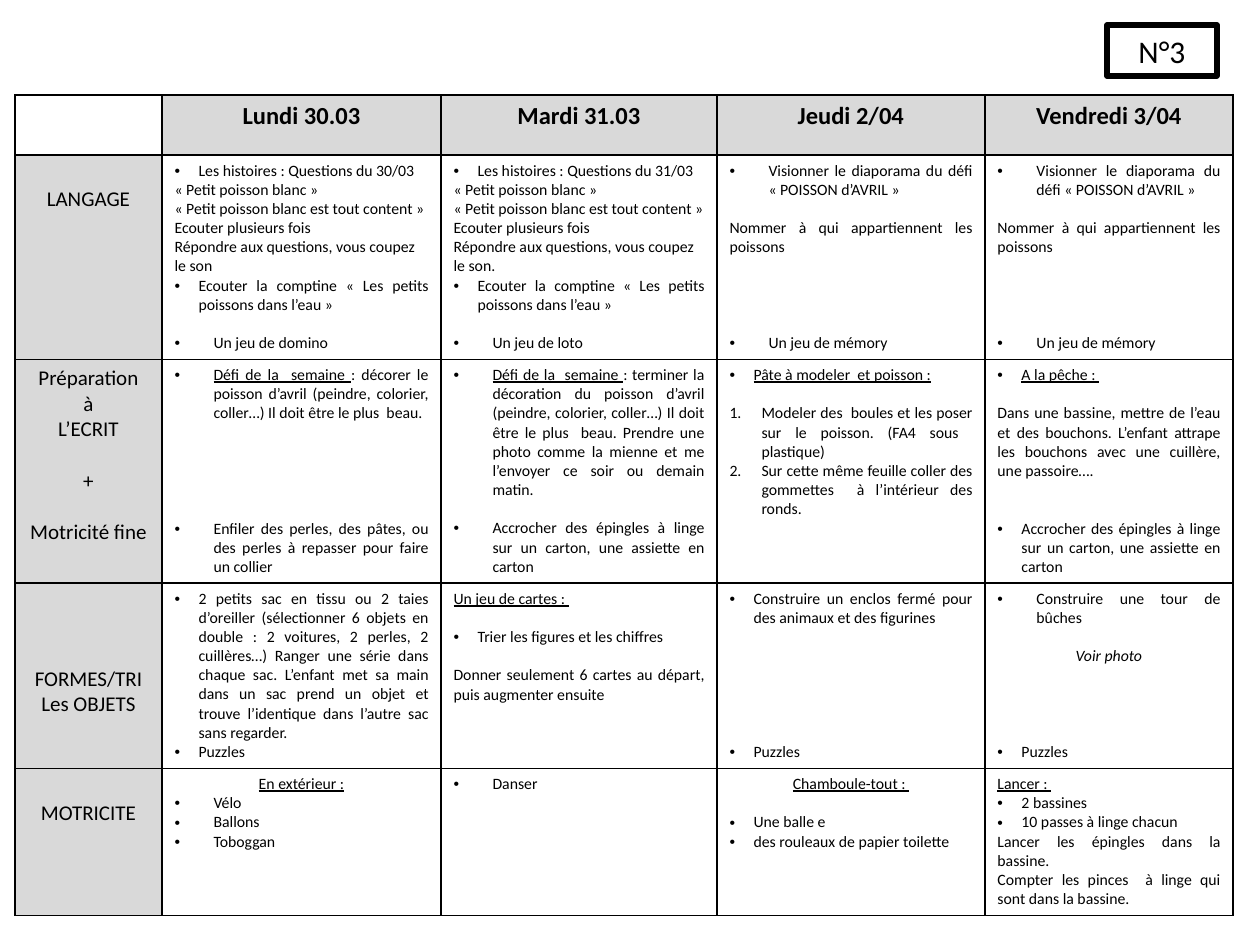
"""Weekly preschool activity timetable on one slide."""
import pptx
import pptx.dml.color
import pptx.enum.shapes
import pptx.enum.text
import pptx.oxml.ns
import pptx.util
from lxml import etree

PX = 914400 // 126
COLORS = {"black": "000000", "white": "FFFFFF", "grey": "D9D9D9"}
FONT = "Calibri"
ALIGN = pptx.enum.text.PP_ALIGN
LINE_PT = {9: 10.98, 12: 14.65}

COLUMNS = [147, 279, 276, 268, 248]
ROWS = [60, 204, 223, 185, 147]
DAYS = ["Lundi 30.03", "Mardi 31.03", "Jeudi 2/04", "Vendredi 3/04"]

STYLES = {
    "left": (ALIGN.LEFT, 0, None),
    "just": (ALIGN.JUSTIFY, 0, None),
    "center": (ALIGN.CENTER, 0, None),
    "italic": (ALIGN.CENTER, 0, None),
    "dotleft": (ALIGN.LEFT, 24, "•"),
    "dot": (ALIGN.JUSTIFY, 24, "•"),
    "widedot": (ALIGN.JUSTIFY, 39, "•"),
    "number": (ALIGN.JUSTIFY, 32, "1."),
}

STORY = [
    ("left", "« Petit poisson blanc »"),
    ("left", "« Petit poisson blanc est tout content »"),
    ("left", "Ecouter plusieurs fois"),
]
RHYME = ("dot", "Ecouter la comptine « Les petits poissons dans l’eau »")
APRIL = [
    ("widedot", "Visionner le diaporama du défi « POISSON d’AVRIL »"),
    ("just", "Nommer à qui appartiennent les poissons", 1),
    ("widedot", "Un jeu de mémory", 4),
]
PEGS = "Accrocher des épingles à linge sur un carton, une assiette en carton"

# Each item is (style, text, blank lines before); underscores delimit underlined text.
ACTIVITIES = [
    ([("center", "LANGAGE", 1)], [
        [("dot", "Les histoires : Questions du 30/03"), *STORY,
         ("left", "Répondre aux questions, vous coupez le son"), RHYME,
         ("widedot", "Un jeu de domino", 1)],
        [("dotleft", "Les histoires : Questions du 31/03"), *STORY,
         ("left", "Répondre aux questions, vous coupez le son."), RHYME,
         ("widedot", "Un jeu de loto", 1)],
        APRIL,
        APRIL,
    ]),
    ([("center", "Préparation"), ("center", "à"), ("center", "L’ECRIT"),
      ("center", "+", 1), ("center", "Motricité fine", 1)], [
        [("widedot", "_Défi de la  semaine _: décorer le poisson d’avril (peindre, "
          "colorier, coller…) Il doit être le plus  beau."),
         ("widedot", "Enfiler des perles, des pâtes, ou des perles à repasser "
          "pour faire un collier", 5)],
        [("widedot", "_Défi de la  semaine _: terminer la décoration du poisson d’avril "
          "(peindre, colorier, coller…) Il doit être le plus  beau. Prendre une photo "
          "comme la mienne et me l’envoyer ce soir ou demain matin."),
         ("widedot", PEGS, 1)],
        [("dot", "_Pâte à modeler  et poisson :_"),
         ("number", "Modeler des  boules et les poser sur le poisson. "
          "(FA4 sous  plastique)", 1),
         ("number", "Sur cette même feuille coller des gommettes  à l’intérieur des ronds.")],
        [("dot", "_A la pêche : _"),
         ("just", "Dans une bassine, mettre de l’eau et des bouchons. L’enfant attrape "
          "les bouchons avec une cuillère, une passoire….", 1),
         ("dot", PEGS, 2)],
    ]),
    ([("center", "FORMES/TRI", 3), ("center", "Les OBJETS")], [
        [("dot", "2 petits sac en tissu ou 2 taies d’oreiller (sélectionner 6 objets en "
          "double : 2 voitures, 2 perles, 2 cuillères…) Ranger une série dans chaque sac. "
          "L’enfant met sa main dans un sac prend un objet et trouve l’identique dans "
          "l’autre sac sans regarder."),
         ("dot", "Puzzles")],
        [("just", "_Un jeu de cartes : _"),
         ("dot", "Trier les figures et les chiffres", 1),
         ("just", "Donner seulement 6 cartes au départ, puis augmenter ensuite", 1)],
        [("dot", "Construire un enclos fermé pour des animaux et des figurines"),
         ("dot", "Puzzles", 6)],
        [("widedot", "Construire une tour de bûches"), ("italic", "Voir photo", 1),
         ("dot", "Puzzles", 4)],
    ]),
    ([("center", "MOTRICITE", 1)], [
        [("center", "_En extérieur :_"), ("widedot", "Vélo"), ("widedot", "Ballons"),
         ("widedot", "Toboggan")],
        [("widedot", "Danser")],
        [("center", "_Chamboule-tout : _"), ("dot", "Une balle e", 1),
         ("dot", "des rouleaux de papier toilette")],
        [("just", "_Lancer : _"), ("dot", "2 bassines"), ("dot", "10 passes à linge chacun"),
         ("just", "Lancer les épingles dans la bassine."),
         ("just", "Compter les pinces  à linge qui sont dans la bassine.")],
    ]),
]


def rgb(name):
    return pptx.dml.color.RGBColor.from_string(COLORS[name])


def add_xml(parent, tag, **attrs):
    return etree.SubElement(parent, pptx.oxml.ns.qn(tag), attrs)


def style_run(r, size, bold=False):
    r.font.name, r.font.size, r.font.bold = FONT, pptx.util.Pt(size), bold
    r.font.color.rgb = rgb("black")


def format_cell(cell, fill):
    tcPr = cell._tc.get_or_add_tcPr()
    for side in ("a:lnL", "a:lnR", "a:lnT", "a:lnB"):
        ln = add_xml(tcPr, side, w="12700")
        add_xml(add_xml(ln, "a:solidFill"), "a:srgbClr", val=COLORS["black"])
    cell.fill.solid()
    cell.fill.fore_color.rgb = rgb(fill)


def fill_cell(cell, items, size, bold=False):
    tf = cell.text_frame
    for i, (style, text, *gap) in enumerate(items):
        p = tf.add_paragraph() if i else tf.paragraphs[0]
        align, indent, mark = STYLES[style]
        pPr = p._p.get_or_add_pPr()
        if mark:
            pPr.set("marL", str(indent * PX))
            pPr.set("indent", str(-indent * PX))
            if mark == "1.":
                add_xml(pPr, "a:buAutoNum", type="arabicPeriod")
            else:
                add_xml(pPr, "a:buFont", typeface="Arial")
                add_xml(pPr, "a:buChar", char=mark)
        p.alignment = align
        if gap:
            space = pptx.util.Pt(gap[0] * LINE_PT[size])
            if i:
                p.space_before = space
            else:
                cell.margin_top += space
        for j, part in enumerate(text.split("_")):
            if part:
                r = p.add_run()
                r.text = part
                style_run(r, size, bold)
                r.font.underline = j % 2 == 1
                r.font.italic = style == "italic"


def add_timetable(s):
    table = s.shapes.add_table(len(ROWS), len(COLUMNS), 15 * PX, 95 * PX,
                               sum(COLUMNS) * PX, sum(ROWS) * PX).table
    for column, width in zip(table.columns, COLUMNS):
        column.width = width * PX
    for row, height in zip(table.rows, ROWS):
        row.height = height * PX
    for i in range(len(ROWS)):
        for j in range(len(COLUMNS)):
            heading = (i == 0) != (j == 0)
            format_cell(table.cell(i, j), "grey" if heading else "white")
    for j, day in enumerate(DAYS, 1):
        fill_cell(table.cell(0, j), [("center", day)], 14, True)
    for i, (title, days) in enumerate(ACTIVITIES, 1):
        fill_cell(table.cell(i, 0), title, 12)
        for j, items in enumerate(days, 1):
            fill_cell(table.cell(i, j), items, 9)


def add_number(s):
    sp = s.shapes.add_shape(pptx.enum.shapes.MSO_SHAPE.RECTANGLE,
                            1107 * PX, 25 * PX, 110 * PX, 51 * PX)
    sp.shadow.inherit = False
    sp.fill.background()
    sp.line.color.rgb = rgb("black")
    sp.line.width = pptx.util.Pt(3)
    tf = sp.text_frame
    tf.text = "N°3"
    p = tf.paragraphs[0]
    p.alignment = ALIGN.CENTER
    style_run(p.runs[0], 18)


def main():
    prs = pptx.Presentation()
    prs.slide_width, prs.slide_height = 1260 * PX, 945 * PX
    s = prs.slides.add_slide(prs.slide_layouts[6])
    add_timetable(s)
    add_number(s)
    prs.save("out.pptx")


if __name__ == "__main__":
    main()
